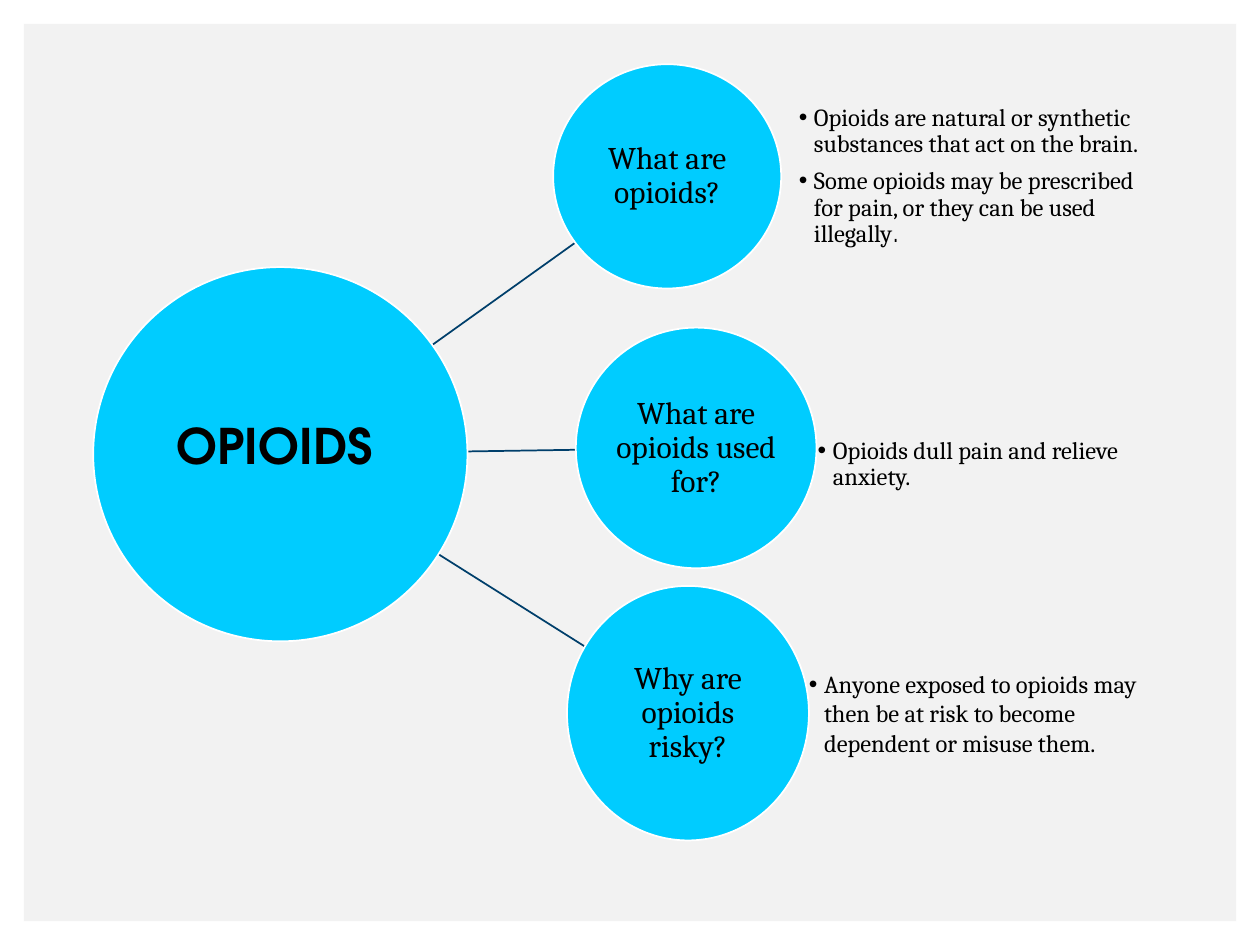
from lxml import etree
from pptx import Presentation
from pptx import util as u
from pptx.dml.color import RGBColor
from pptx.enum import shapes, text
from pptx.oxml.ns import qn

BODY_FONT = "Cambria"
TITLE_FONT = "TeX Gyre Adventor"
BLACK, WHITE, CYAN, NAVY, GRAY = "000000", "FFFFFF", "00CCFF", "003F6B", "F2F2F2"

HUB_BOX = (0.74, 2.12, 2.97, 2.97)
TOPICS = [
    {
        "question": "What are opioids?",
        "circle": (4.39, 0.51, 1.81, 1.78),
        "answers": [
            [("Opioids are natural or synthetic substances that act on the brain.", BODY_FONT)],
            [("Some opioids may be prescribed for pain, or they can be used illegally", BODY_FONT),
             (".", TITLE_FONT)],
        ],
        "answer_box": (6.34, 0.51, 2.71, 1.78),
        "line_spacing": 0.9,
        "top_inset": 0,
        "spoke": (3.26, 2.86, 4.56, 1.93),
    },
    {
        "question": "What are opioids used for?",
        "circle": (4.57, 2.6, 1.91, 1.91),
        "answers": [[("Opioids dull pain and relieve anxiety.", BODY_FONT)]],
        "answer_box": (6.49, 2.6, 2.87, 1.91),
        "line_spacing": 0.9,
        "top_inset": 0.26,
        "spoke": (3.26, 3.59, 4.57, 3.57),
    },
    {
        "question": "Why are opioids risky?",
        "circle": (4.5, 4.65, 1.92, 2.02),
        "answers": [[("Anyone exposed to opioids may then be at risk to become dependent or misuse them.",
                      BODY_FONT)]],
        "answer_box": (6.42, 4.65, 2.88, 2.02),
        "line_spacing": 1.0,
        "top_inset": 0,
        "spoke": (3.26, 4.26, 4.64, 5.13),
    },
]


def color(value):
    return RGBColor.from_string(value)


def inches(box):
    return [u.Inches(length) for length in box]


def format_run(run, font, size, bold=False):
    run.font.name = font
    run.font.size = u.Pt(size)
    run.font.bold = bold
    run.font.color.rgb = color(BLACK)


def set_frame(frame, inset, top_inset):
    frame.word_wrap = True
    frame.vertical_anchor = text.MSO_ANCHOR.MIDDLE
    frame.margin_left = frame.margin_right = frame.margin_bottom = u.Inches(inset)
    frame.margin_top = u.Inches(top_inset)


def add_panel(slide, box):
    shape = slide.shapes.add_shape(shapes.MSO_SHAPE.RECTANGLE, *inches(box))
    shape.shadow.inherit = False
    shape.fill.solid()
    shape.fill.fore_color.rgb = color(GRAY)
    shape.line.fill.background()


def add_spoke(slide, ends):
    connector = slide.shapes.add_connector(shapes.MSO_CONNECTOR.STRAIGHT, *inches(ends))
    connector.line.color.rgb = color(NAVY)
    connector.line.width = u.Pt(1)
    etree.SubElement(connector._element.spPr, qn("a:effectLst"))


def add_circle(slide, box):
    shape = slide.shapes.add_shape(shapes.MSO_SHAPE.OVAL, *inches(box))
    shape.shadow.inherit = False
    shape.fill.solid()
    shape.fill.fore_color.rgb = color(CYAN)
    shape.line.color.rgb = color(WHITE)
    shape.line.width = u.Pt(1)
    return shape


def add_hub(slide, box):
    add_circle(slide, box)
    left, top, width, height = box
    label = (left + 0.56, top + 1.13, 2.18, 0.57)
    frame = slide.shapes.add_textbox(*inches(label)).text_frame
    frame.word_wrap = True
    frame.text = "OPIOIDS"
    format_run(frame.paragraphs[0].runs[0], TITLE_FONT, 28, True)


def add_question(slide, box, question):
    frame = add_circle(slide, box).text_frame
    set_frame(frame, 0.01, 0.01)
    frame.text = question
    paragraph = frame.paragraphs[0]
    paragraph.alignment = text.PP_ALIGN.CENTER
    paragraph.line_spacing = 0.9
    format_run(paragraph.runs[0], BODY_FONT, 18)


def add_bullet(paragraph):
    properties = paragraph._p.get_or_add_pPr()
    properties.set("marL", str(u.Inches(0.12)))
    properties.set("indent", str(u.Inches(-0.12)))
    etree.SubElement(properties, qn("a:buFont")).set("typeface", "Arial")
    etree.SubElement(properties, qn("a:buChar")).set("char", "•")


def add_answers(slide, box, answers, line_spacing, top_inset):
    frame = slide.shapes.add_textbox(*inches(box)).text_frame
    set_frame(frame, 0, top_inset)
    for index, answer in enumerate(answers):
        paragraph = frame.add_paragraph() if index else frame.paragraphs[0]
        paragraph.line_spacing = line_spacing
        paragraph.space_after = u.Pt(6)
        add_bullet(paragraph)
        for words, font in answer:
            run = paragraph.add_run()
            run.text = words
            format_run(run, font, 14)


def main():
    presentation = Presentation()
    presentation.slide_width, presentation.slide_height = inches((10, 7.5))
    slide = presentation.slides.add_slide(presentation.slide_layouts[6])
    add_panel(slide, (0.19, 0.19, 9.62, 7.12))
    for topic in TOPICS:
        add_spoke(slide, topic["spoke"])
    add_hub(slide, HUB_BOX)
    for topic in TOPICS:
        add_question(slide, topic["circle"], topic["question"])
        add_answers(slide, topic["answer_box"], topic["answers"],
                    topic["line_spacing"], topic["top_inset"])
    presentation.save("out.pptx")


if __name__ == "__main__":
    main()
